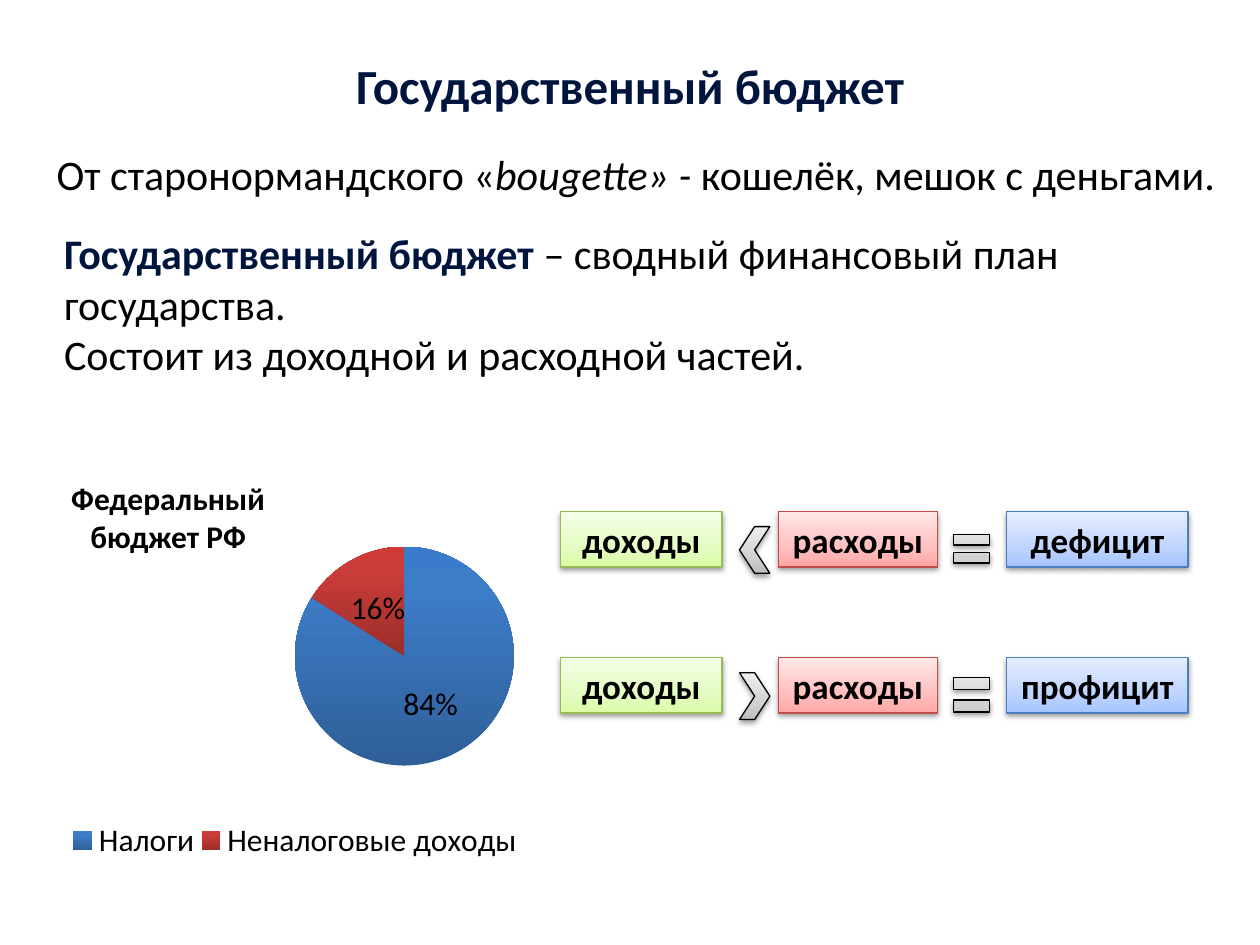
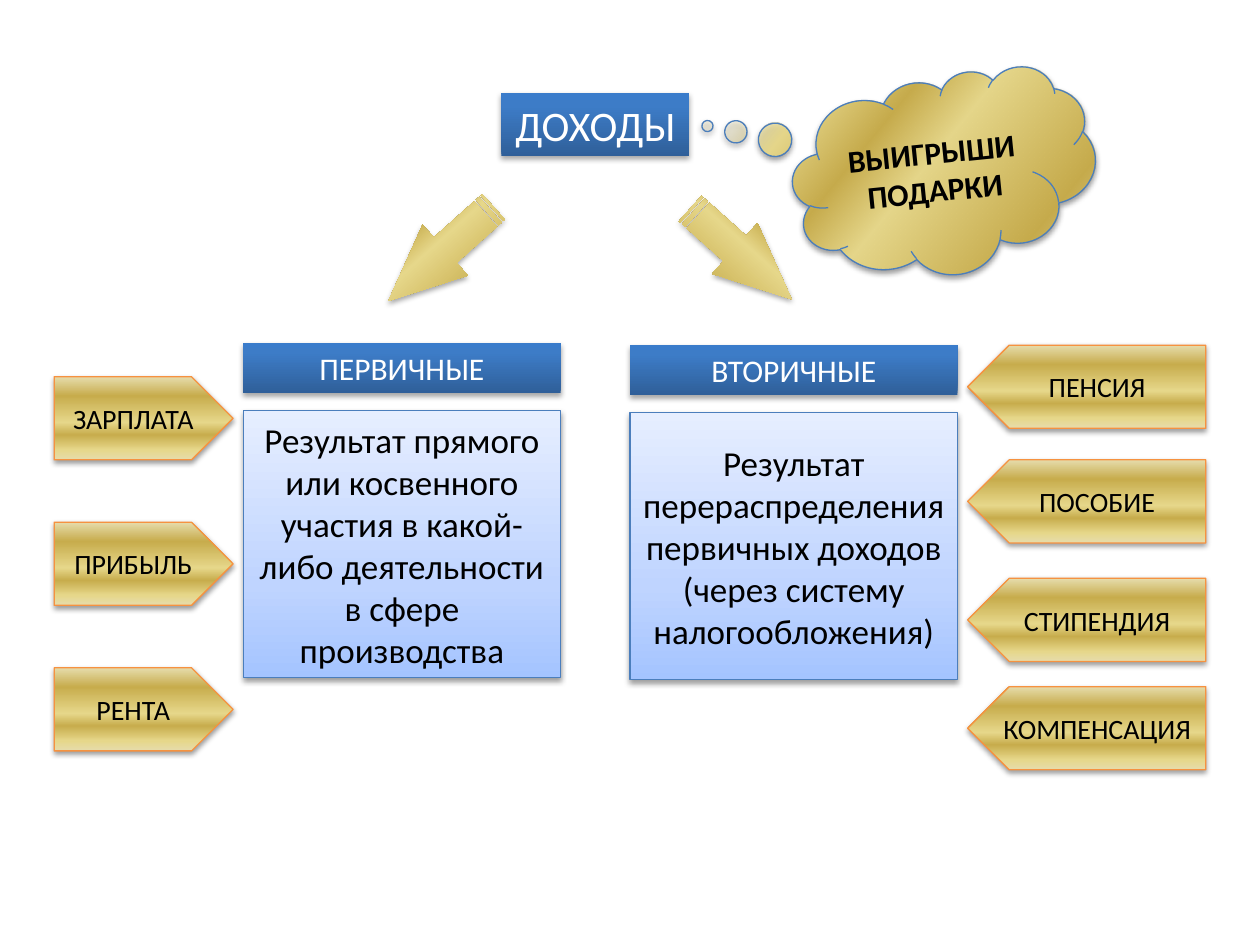
"""Build two slides on the state budget and on kinds of income."""
from dataclasses import dataclass

from lxml import etree
from pptx import Presentation
from pptx import util as u
from pptx.chart.data import CategoryChartData
from pptx.dml.color import RGBColor
from pptx.enum import chart as ch, shapes, text
from pptx.oxml.ns import qn

KIND = shapes.MSO_SHAPE
CENTER, LEFT = text.PP_ALIGN.CENTER, text.PP_ALIGN.LEFT
COLUMNS, ROWS = 100, 75
SOFT_SHADOW = (38, 40000, 20000)
STRONG_SHADOW = (35, 40000, 23000)
GOLD_STOPS = ((0, "E6DCAC"), (12, "E6D78A"), (30, "C7AC4C"),
              (45, "E6D78A"), (77, "C7AC4C"), (100, "E6DCAC"))


@dataclass(frozen=True)
class Look:
    stops: tuple
    line: str = ""
    shadow: tuple = SOFT_SHADOW
    angle: int = 90


@dataclass(frozen=True)
class Theme:
    font: str = "Calibri"
    ink: str = "000000"
    navy: str = "00153E"
    white: str = "FFFFFF"
    title: int = 28
    body: int = 24
    box: int = 20
    label: int = 18
    tag: int = 16
    green: Look = Look(((0, "DAFDA7"), (35, "E4FCC2"), (100, "F5FFE7")), "98B955")
    pink: Look = Look(((0, "FFA6A5"), (35, "FFC0BF"), (100, "FFE7E7")), "BF4C48")
    sky: Look = Look(((0, "A4C4FF"), (35, "BFD4FF"), (100, "E6EEFF")), "4B7EBC")
    grey: Look = Look(((0, "BDBDBD"), (35, "D1D1D1"), (100, "EEEEEE")), "000000")
    blue: Look = Look(((0, "2F5F99"), (80, "3D7CC7"), (100, "3A7CCB")), "", STRONG_SHADOW)
    red: Look = Look(((0, "9B2D2A"), (80, "CB3D3A"), (100, "CE3B37")))
    gold: Look = Look(GOLD_STOPS, "F69240")
    arrow: Look = Look(GOLD_STOPS, "", STRONG_SHADOW)
    cloud: Look = Look(((0, "E6DCAC", 28),) + GOLD_STOPS[1:], "4B7EBC", SOFT_SHADOW, 315)


def add_color(parent, color, alpha=100):
    node = etree.SubElement(parent, qn("a:srgbClr"), val=color)
    if alpha < 100:
        etree.SubElement(node, qn("a:alpha"), val=str(alpha * 1000))


def add_layout(parent, index, inner, **shares):
    """Place a chart part by shares of the chart's size."""
    for old in parent.findall(qn("c:layout")):
        parent.remove(old)
    layout = etree.Element(qn("c:layout"))
    parent.insert(index, layout)
    manual = etree.SubElement(layout, qn("c:manualLayout"))
    if inner:
        etree.SubElement(manual, qn("c:layoutTarget"), val="inner")
    for mode in ("xMode", "yMode"):
        etree.SubElement(manual, qn(f"c:{mode}"), val="edge")
    for side, share in shares.items():
        etree.SubElement(manual, qn(f"c:{side}"), val=str(share))


class Deck:
    def __init__(self, theme):
        self.theme = theme
        self.file = Presentation()
        self.file.slide_width, self.file.slide_height = u.Inches(10), u.Inches(7.5)
        self.slide = None

    def place(self, left, top, width, height):
        column = self.file.slide_width / COLUMNS
        row = self.file.slide_height / ROWS
        return [round(n) for n in (left * column, top * row, width * column, height * row)]

    def fill_text(self, frame, paragraphs, size, color=None, bold=False, align=CENTER):
        """Fill a frame with strings or lists of (words, style, color) parts."""
        for number, content in enumerate(paragraphs):
            paragraph = frame.add_paragraph() if number else frame.paragraphs[0]
            paragraph.alignment = align
            parts = [(content, "b" if bold else "", color)] if isinstance(content, str) else content
            for words, style, tint in parts:
                run = paragraph.add_run()
                run.text = words
                run.font.name, run.font.size = self.theme.font, u.Pt(size)
                run.font.bold, run.font.italic = "b" in style, "i" in style
                run.font.color.rgb = RGBColor.from_string(tint or self.theme.ink)

    def gradient(self, fill, look):
        fill.gradient()
        fill.gradient_angle = look.angle
        stops = fill._xPr.find(".//" + qn("a:gsLst"))
        for old in list(stops):
            stops.remove(old)
        for position, *color in look.stops:
            add_color(etree.SubElement(stops, qn("a:gs"), pos=str(position * 1000)), *color)

    def dress(self, shape, look):
        self.gradient(shape.fill, look)
        if look.line:
            shape.line.color.rgb = RGBColor.from_string(look.line)
            shape.line.width = u.Pt(0.75)
        else:
            shape.line.fill.background()
        shape.shadow.inherit = False
        alpha, blur, distance = look.shadow
        effects = shape._element.spPr.find(qn("a:effectLst"))
        cast = etree.SubElement(effects, qn("a:outerShdw"), blurRad=str(blur), dist=str(distance),
                                dir="5400000", rotWithShape="0")
        add_color(cast, "000000", alpha)

    def titled(self, words, place, size, color, bold=False, look=None):
        self.slide = self.file.slides.add_slide(self.file.slide_layouts[5])
        title = self.slide.shapes.title
        title.left, title.top, title.width, title.height = self.place(*place)
        title.text_frame.auto_size = text.MSO_AUTO_SIZE.NONE
        title.text_frame.word_wrap = False
        self.fill_text(title.text_frame, [words], size, color, bold)
        if look:
            self.dress(title, look)

    def note(self, place, paragraphs, size, bold=False, align=LEFT):
        frame = self.slide.shapes.add_textbox(*self.place(*place)).text_frame
        frame.word_wrap = True
        self.fill_text(frame, paragraphs, size, bold=bold, align=align)

    def figure(self, kind, place, look, words=(), size=0, color=None, bold=False,
               turn=0, flip=False, adjust=()):
        shape = self.slide.shapes.add_shape(kind, *self.place(*place))
        self.dress(shape, look)
        shape.rotation = turn
        if flip:
            shape._element.spPr.find(qn("a:xfrm")).set("flipH", "1")
        for index, value in enumerate(adjust):
            shape.adjustments[index] = value
        if words:
            shape.text_frame.word_wrap = True
            shape.text_frame.vertical_anchor = text.MSO_ANCHOR.MIDDLE
            self.fill_text(shape.text_frame, words, size, color, bold)

    def pie(self, place, shares, looks):
        data = CategoryChartData()
        data.categories = list(shares)
        data.add_series("Series 1", list(shares.values()))
        chart = self.slide.shapes.add_chart(ch.XL_CHART_TYPE.PIE, *self.place(*place), data).chart
        chart.has_title = False
        chart.font.name, chart.font.size = self.theme.font, u.Pt(self.theme.label)
        chart.font.color.rgb = RGBColor.from_string(self.theme.ink)
        chart.has_legend = True
        chart.legend.position = ch.XL_LEGEND_POSITION.TOP
        chart.legend.include_in_layout = False
        add_layout(chart.legend._element, 1, False, x=0.08, y=0.86, w=0.9, h=0.08)
        plot = chart.plots[0]
        add_layout(chart._chartSpace.chart.plotArea, 0, True, x=0.53, y=0.1, w=0.43, h=0.86)
        plot.vary_by_categories = True
        plot.has_data_labels = True
        labels = plot.data_labels
        labels.show_percentage, labels.show_value = True, False
        labels.number_format, labels.number_format_is_linked = "0%", False
        labels.position = ch.XL_LABEL_POSITION.CENTER
        for index, look in enumerate(looks):
            self.gradient(plot.series[0].points[index].format.fill, look)


def budget_slide(deck):
    theme = deck.theme
    deck.titled("Государственный бюджет", (26.4, 3.9, 47.2, 5.7), theme.title, theme.navy, True)
    deck.note((3.5, 11.3, 94.5, 5),
              [[("От старонормандского «", "", None), ("bougette» - ", "i", None),
                ("кошелёк, мешок с деньгами.", "", None)]], theme.body)
    deck.note((4.1, 17.6, 92.9, 13.1),
              [[("Государственный бюджет ", "b", theme.navy),
                ("– сводный финансовый план государства.", "", None)],
               "Состоит из доходной и расходной частей."], theme.body)
    deck.pie((2, 31.1, 40.4, 39.6), {"Налоги": 84, "Неналоговые доходы": 16},
             (theme.blue, theme.red))
    deck.note((3.5, 37.5, 19.7, 7.1), ["Федеральный бюджет РФ"], theme.label, True, CENTER)

    balances = ((40.6, "дефицит", True, (0.18, 0.12)), (52.2, "профицит", False, (0.2, 0.18)))
    for row, outcome, less_than, bars in balances:
        terms = ((44.5, 12.8, "доходы", theme.green), (61.8, 12.6, "расходы", theme.pink),
                 (79.9, 14.4, outcome, theme.sky))
        for column, width, term, look in terms:
            deck.figure(KIND.RECTANGLE, (column, row, width, 4.4), look, [term], theme.box, bold=True)
        deck.figure(KIND.CHEVRON, (58.7, row + 1.2, 2.4, 3.7), theme.grey, flip=less_than)
        deck.figure(KIND.MATH_EQUAL, (75.15, row + 0.6, 3.9, 4.7), theme.grey, adjust=bars)


def income_slide(deck):
    theme = deck.theme
    deck.titled("ДОХОДЫ", (39.8, 7.4, 14.9, 5), theme.body, theme.white, look=theme.blue)
    for column, width, turn, flip in ((29.4, 11.2, 138.2, False), (53.4, 10.8, 221.8, True)):
        deck.figure(KIND.STRIPED_RIGHT_ARROW, (column, 17.45, width, 5.4), theme.arrow,
                    turn=turn, flip=flip, adjust=(0.5, 1.12))

    groups = (
        (19.3, 27.2, 25.2, "ПЕРВИЧНЫЕ", "Результат прямого или косвенного участия "
         "в какой-либо деятельности в сфере производства"),
        (50, 27.35, 26, "ВТОРИЧНЫЕ", "Результат перераспределения первичных доходов "
         "(через систему налогообложения)"))
    for column, row, width, heading, meaning in groups:
        deck.figure(KIND.RECTANGLE, (column, row + 5.4, width, 21.2), theme.sky, [meaning], theme.box)
        deck.figure(KIND.RECTANGLE, (column, row, width, 4), theme.blue, [heading],
                    theme.label, theme.white)

    for number, source in enumerate(("ЗАРПЛАТА", "ПРИБЫЛЬ", "РЕНТА")):
        deck.figure(KIND.PENTAGON, (4.3, 29.9 + 11.55 * number, 14.2, 6.6), theme.gold,
                    [source], theme.tag)
    transfers = {"ПЕНСИЯ": 27.4, "ПОСОБИЕ": 36.5, "СТИПЕНДИЯ": 45.9, "КОМПЕНСАЦИЯ": 54.5}
    for transfer, row in transfers.items():
        deck.figure(KIND.PENTAGON, (76.8, row, 18.9, 6.6), theme.gold, [transfer],
                    theme.tag, flip=True)
    deck.figure(KIND.CLOUD_CALLOUT, (62.9, 5.9, 24.1, 15.9), theme.cloud, ["ВЫИГРЫШИ", "ПОДАРКИ"],
                theme.label, bold=True, turn=354.2, adjust=(-0.76, -0.36))


def main():
    deck = Deck(Theme())
    budget_slide(deck)
    income_slide(deck)
    deck.file.save("out.pptx")


if __name__ == "__main__":
    main()
